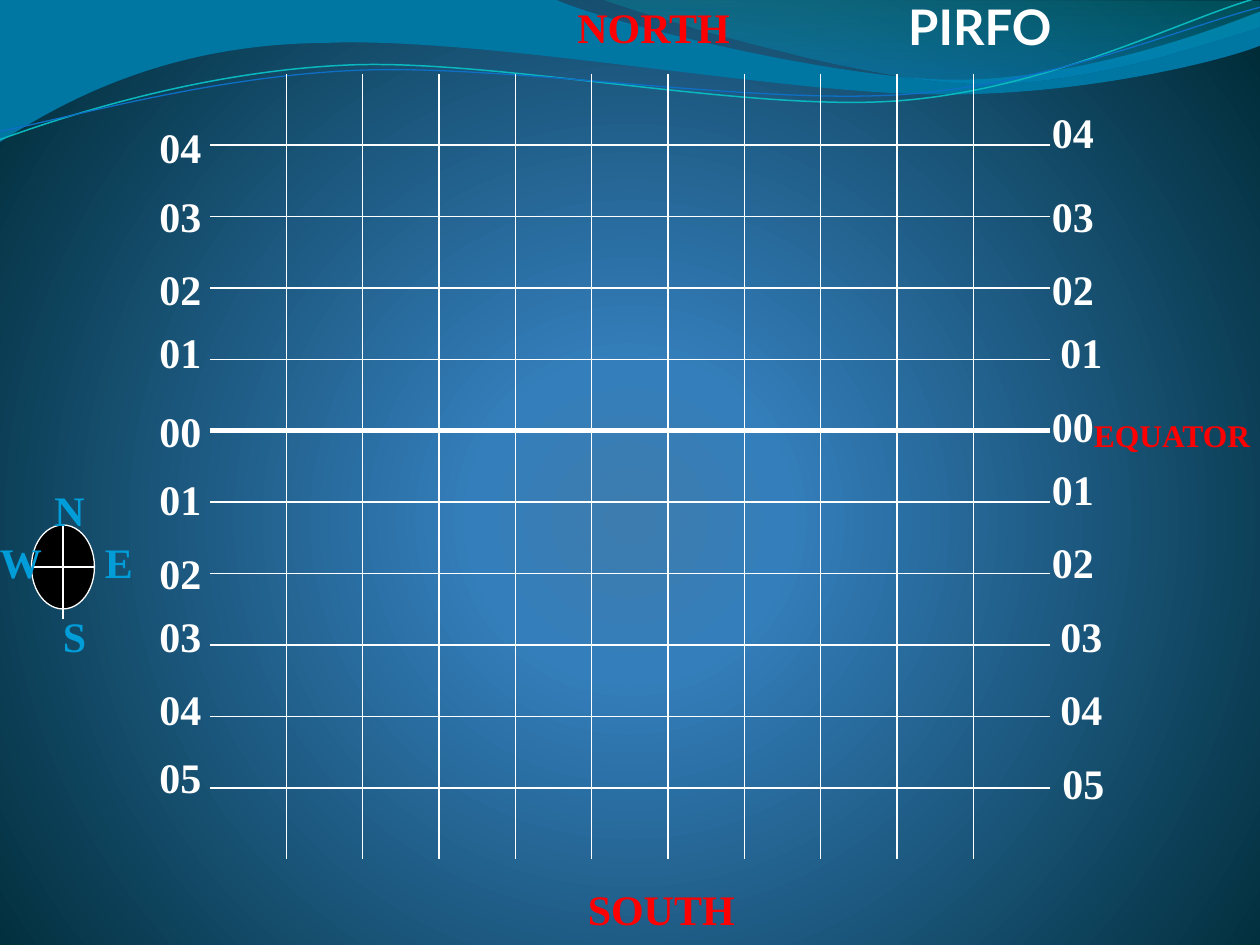
from math import cos, radians, sin
from lxml.etree import SubElement as Sub
from pptx import Presentation
from pptx.dml.color import RGBColor as Rgb
from pptx.enum.shapes import MSO_CONNECTOR as Conn, MSO_SHAPE as Kind
from pptx.enum.text import MSO_ANCHOR as Anchor, MSO_AUTO_SIZE as Auto, PP_ALIGN as Align
from pptx.oxml.ns import qn
from pptx.util import Inches, Pt

HUE = {"white": "FFFFFF", "black": "000000", "red": "FF0000", "sky": "009DD9",
       "wave": "0076A3", "teal": "00A1A9", "blue": "008BBF", "aqua": "0AB8BF",
       "navy": "0F6FC6", "core": "3D7CAE", "mid": "347EBB", "rim": "002C38"}
SERIF = "Times New Roman"
WIDE, HIGH = Inches(10), Inches(7.5)
COLS = 120
UNIT = WIDE / COLS
TILT = -2.7
NO_STYLE = "{2D5ABB26-0587-4C30-8999-92F81FD0307C}"

CREST = [(0, -0.1), (52.8, -0.1), (57.1, 2, 79.7, 7.6, 91, 7.6),
         (102.4, 7.6, 115, 3.1, 120, 1.1), (120.1, 4.3),
         (118, 5.3, 104.4, 9.1, 89.5, 9), (74.6, 9, 45.8, 3.4, 30.8, 4.1),
         (15.5, 4.2, 5.5, 10, -0.1, 13.6)]
GLOW = [(57.4, 0), (61.1, 1.4, 81.7, 7.6, 92.2, 7.9),
        (102.6, 8.4, 115.3, 4, 119.9, 2.6), (119.9, 0.1)]
SWELLS = [("aqua", 0.85, 6.9, [(0, 13.3), (5.8, 11.2, 19, 6.8, 33.2, 6.2),
                               (47.4, 5.6, 71.2, 10.7, 85.6, 9.6),
                               (100, 8.5, 112.6, 1.8, 119.8, -0.2)]),
          ("navy", 0.75, 7.1, [(0, 12.5), (5.6, 11.5, 19.7, 7.3, 34, 6.7),
                               (48.4, 6.1, 71.6, 10, 86, 9),
                               (100.3, 8, 112.9, 2.5, 120, 0.7)])]

LEFT = [("04", 0, 11), ("03", 0, 17.6), ("02", 0, 24.5), ("01", 0, 30.5),
        ("00", 0, 38), ("01", 0, 44.5), ("02", 0, 51.6), ("03", 0, 57.6),
        ("04", 0, 64.5), ("05", 0, 71)]
RIGHT = [("04", 0, 9.6), ("03", 0, 17.6), ("02", 0, 24.5), ("01", 0.8, 30.5),
         ("00", 0, 37.6), ("01", 0, 43.6), ("02", 0, 50.5), ("03", 0.8, 57.6),
         ("04", 0.8, 64.5), ("05", 1, 71.6)]


def at(*nums):
    return [round(n * UNIT) for n in nums]


def tint(name):
    return Rgb.from_string(HUE[name])


def paint(shape, name):
    shape.fill.solid()
    shape.fill.fore_color.rgb = tint(name)


def fade(host, stops, path=None):
    host.gradient()
    grad = host._fill._gradFill
    for kid in list(grad):
        grad.remove(kid)
    gs_list = Sub(grad, qn("a:gsLst"))
    for pos, name, alpha in stops:
        stop = Sub(gs_list, qn("a:gs"), pos=str(pos * 1000))
        clr = Sub(stop, qn("a:srgbClr"), val=HUE[name])
        if alpha < 100:
            Sub(clr, qn("a:alpha"), val=str(alpha * 1000))
    if path:
        node = Sub(grad, qn("a:path"), path="circle")
        Sub(node, qn("a:fillToRect"), **{k: str(v * 1000) for k, v in path.items()})
    else:
        Sub(grad, qn("a:lin"), ang="5400000", scaled="0")


def turn(path, mid, angle):
    c, s = cos(radians(angle)), sin(radians(angle))
    done = []
    for seg in path:
        new = []
        for x, y in zip(seg[::2], seg[1::2]):
            dx, dy = x - COLS / 2, y - mid
            new += [COLS / 2 + c * dx - s * dy, mid + s * dx + c * dy]
        done.append(new)
    return done


def outline(slide, path, close):
    pts = [at(*seg[i:i + 2]) for seg in path for i in range(0, len(seg), 2)]
    pen = slide.shapes.build_freeform(*pts[0])
    pen.add_line_segments(pts[1:], close=close)
    shape = pen.convert_to_shape()
    nodes = iter(list(shape._element.iter(qn("a:lnTo"))))
    for seg in path[1:]:
        node = next(nodes)
        if len(seg) == 6:
            node.tag = qn("a:cubicBezTo")
            for other in (next(nodes), next(nodes)):
                node.append(other[0])
                other.getparent().remove(other)
    shape.shadow.inherit = False
    shape.line.fill.background()
    shape.fill.background()
    return shape


def style(shape, text, name, size, face=SERIF):
    frame = shape.text_frame
    frame.text = text
    frame.word_wrap = True
    frame.auto_size = Auto.NONE
    frame.vertical_anchor = Anchor.TOP
    para = frame.paragraphs[0]
    para.alignment = Align.LEFT
    font = para.font
    font.name, font.size, font.bold = face, Pt(size), True
    font.color.rgb = tint(name)


def label(slide, text, x, y, wide, name="white", size=24):
    style(slide.shapes.add_textbox(*at(x, y, wide, size / 4)), text, name, size)


def rule(slide, x1, y1, x2, y2, width):
    line = slide.shapes.add_connector(Conn.STRAIGHT, *at(x1, y1, x2, y2))
    line.line.color.rgb = tint("white")
    line.line.width = Pt(width)
    Sub(line._element.spPr, qn("a:effectLst"))


def waves(slide):
    fade(slide.background.fill, [(0, "core", 100), (20, "mid", 100), (100, "rim", 100)],
         {"l": 10, "t": 110, "r": 10, "b": 100})
    paint(outline(slide, CREST, True), "wave")
    fade(outline(slide, GLOW, True).fill, [(0, "teal", 30), (80, "blue", 45)])
    for name, width, mid, path in SWELLS:
        swell = outline(slide, turn(path, mid, -TILT), False)
        swell.rotation = TILT
        swell.line.color.rgb = tint(name)
        swell.line.width = Pt(width)
    ring = slide.shapes.add_shape(Kind.DONUT, *at(-0.7, -0.4, 10.6, 10.4))
    ring.adjustments[0] = 0.17
    ring.shadow.inherit = False
    ring.line.fill.background()
    paint(ring, "wave")


def heading(slide, x, y, wide, high):
    title = slide.shapes.title
    title.left, title.top, title.width, title.height = at(x, y, wide, high)
    style(title, "PIRFO", "white", 28, "Lato")
    slide.shapes._spTree.append(title._element)


def chart_grid(slide, x, y, wide, high, count=11):
    frame = slide.shapes.add_table(count, count, *at(x, y, wide, high))
    table = frame.table
    table.first_row = table.horz_banding = False
    table._tbl.tblPr.find(qn("a:tableStyleId")).text = NO_STYLE
    for col in table.columns:
        col.width = round(wide * UNIT / count)
    for row in table.rows:
        row.height = round(high * UNIT / count)
    last = count - 1
    for r in range(count):
        for c in range(count):
            cell = table.cell(r, c)
            props = cell._tc.get_or_add_tcPr()
            inner = {"lnL": c > 0, "lnR": c < last, "lnT": r > 0, "lnB": r < last}
            for side, shown in inner.items():
                edge = Sub(props, qn("a:" + side), w=str(Pt(1)))
                if shown:
                    Sub(Sub(edge, qn("a:solidFill")), qn("a:srgbClr"), val=HUE["white"])
                else:
                    Sub(edge, qn("a:noFill"))
            cell.fill.background()


def scale(slide, x, marks):
    for text, dx, y in marks:
        label(slide, text, x + dx, y, 8)


def compass(slide, x, y, wide, high):
    disc = slide.shapes.add_shape(Kind.OVAL, *at(x, y, wide, high))
    disc.shadow.inherit = False
    paint(disc, "black")
    disc.line.color.rgb = tint("white")
    disc.line.width = Pt(0.75)
    rule(slide, x + wide / 2, y, x + wide / 2, y + high + 1, 0.75)
    rule(slide, x, y + high / 2, x + wide, y + high / 2, 0.75)
    for text, dx, dy in [("N", 1, -4.4), ("E", 5.8, 0.5), ("S", 1.8, 7.6), ("W", -4.2, 0.5)]:
        label(slide, text, x + dx, y + dy, 6.4, "sky")


def equator(slide, x, y, wide):
    rule(slide, x, y, x + wide, y, 3)
    label(slide, "EQUATOR", x + wide + 3, y - 2, 19.3, "red", 18)


def main():
    deck = Presentation()
    deck.slide_width, deck.slide_height = WIDE, HIGH
    slide = deck.slides.add_slide(deck.slide_layouts[5])
    waves(slide)
    heading(slide, 85.3, -0.9, 18, 6.8)
    chart_grid(slide, 20, 7, 80, 74.85)
    scale(slide, 14, LEFT)
    scale(slide, 99, RIGHT)
    compass(slide, 3, 50, 6, 8)
    equator(slide, 20, 41, 80)
    label(slide, "NORTH", 53.8, -0.4, 17, "red")
    label(slide, "SOUTH", 54.8, 83.6, 16.5, "red")
    deck.save("out.pptx")


if __name__ == "__main__":
    main()
